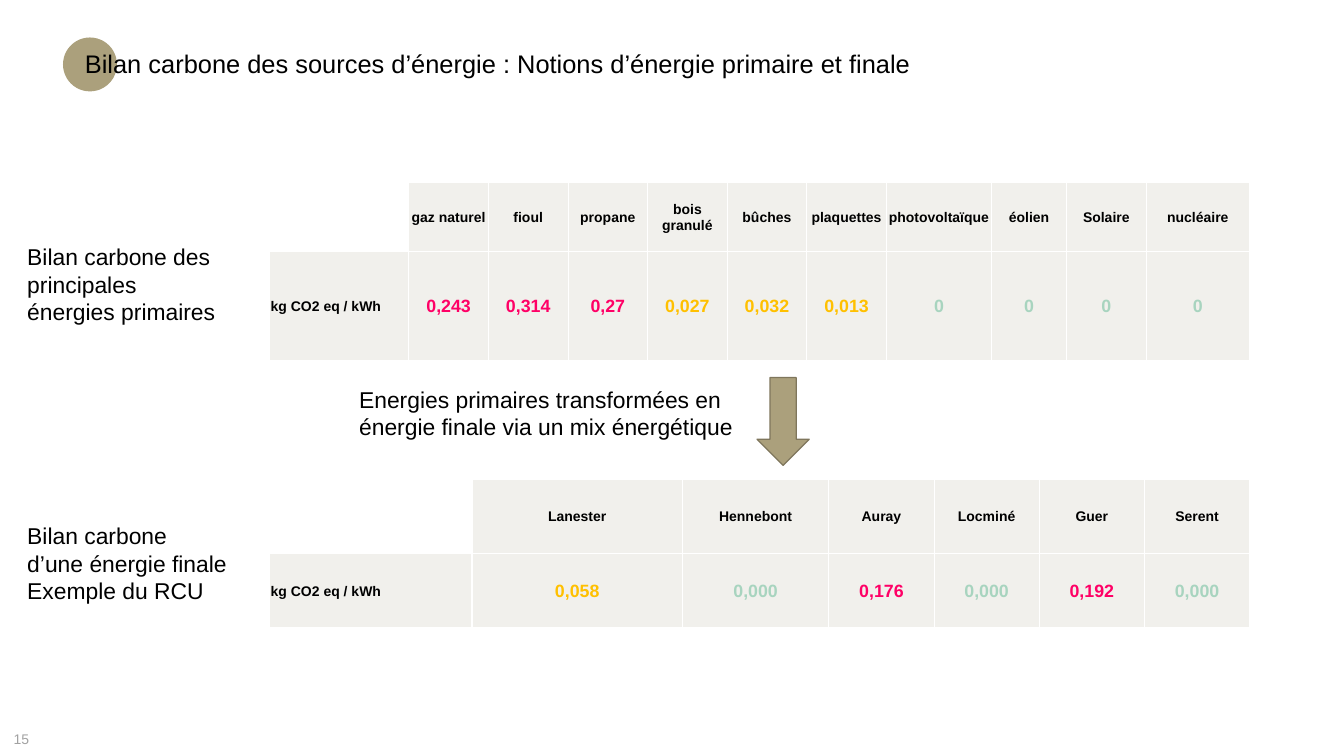
from dataclasses import dataclass

from lxml.etree import SubElement
from pptx import Presentation
from pptx.dml.color import RGBColor as Rgb
from pptx.enum.shapes import MSO_SHAPE as Preset
from pptx.enum.text import MSO_ANCHOR as Anchor, PP_ALIGN as Align
from pptx.oxml.ns import qn
from pptx.util import Inches, Pt


@dataclass(frozen=True)
class Theme:
    """Colours, font and type sizes of the slide."""
    font: str = "Arial"
    ink: str = "000000"
    muted: str = "A2A2A2"
    accent: str = "ABA07C"
    accent_edge: str = "7F765C"
    cell: str = "F1F0EC"
    rule: str = "FFFFFF"
    high: str = "FF0066"
    medium: str = "FFC000"
    zero: str = "A8D4BF"
    title_size: int = 20
    label_size: int = 18
    value_size: int = 14
    small_size: int = 11


@dataclass(frozen=True)
class Box:
    """A rectangle whose inner boxes are given in percent of its sides."""
    left: float
    top: float
    width: float
    height: float

    def share(self, left, top, width, height):
        """Return the box at the given percentages of this one."""
        return Box(self.left + self.width * left / 100,
                   self.top + self.height * top / 100,
                   self.width * width / 100,
                   self.height * height / 100)

    def place(self):
        """Return the four lengths as whole units."""
        return [int(side) for side in
                (self.left, self.top, self.width, self.height)]


THEME = Theme()
HIGH_CARBON = 0.1
UNIT = "kg CO2 eq / kWh"

PRIMARY = [("gaz naturel", "0,243"), ("fioul", "0,314"), ("propane", "0,27"),
           ("bois granulé", "0,027"), ("bûches", "0,032"),
           ("plaquettes", "0,013"), ("photovoltaïque", "0"), ("éolien", "0"),
           ("Solaire", "0"), ("nucléaire", "0")]
PRIMARY_COLUMNS = [1.52] + [0.87] * 6 + [1.15, 0.82, 0.87, 1.13]

FINAL = [("Lanester", "0,058"), ("Hennebont", "0,000"), ("Auray", "0,176"),
         ("Locminé", "0,000"), ("Guer", "0,192"), ("Serent", "0,000")]
FINAL_COLUMNS = [2.21, 2.3, 1.6] + [1.15] * 4


def add_run(paragraph, wording, size, color=THEME.ink, bold=False):
    """Add one styled run to a paragraph."""
    run = paragraph.add_run()
    run.text = wording
    run.font.name = THEME.font
    run.font.size = Pt(size)
    run.font.bold = bold
    run.font.color.rgb = Rgb.from_string(color)


def add_text(slide, box, lines, size, color=THEME.ink, wrap=True):
    """Add a text box with one paragraph per line and return its frame."""
    frame = slide.shapes.add_textbox(*box.place()).text_frame
    frame.word_wrap = wrap
    for index, line in enumerate(lines):
        paragraph = frame.add_paragraph() if index else frame.paragraphs[0]
        add_run(paragraph, line, size, color)
    return frame


def add_accent(slide, preset, box, edge=None):
    """Add an accent shape, outlined when an edge colour is given."""
    accent = slide.shapes.add_shape(preset, *box.place())
    accent.shadow.inherit = False
    accent.fill.solid()
    accent.fill.fore_color.rgb = Rgb.from_string(THEME.accent)
    if edge:
        accent.line.color.rgb = Rgb.from_string(edge)
        accent.line.width = Pt(1)
    else:
        accent.line.fill.background()


def style_cell(cell, filled):
    """Set the borders, fill, margins and anchor of a table cell."""
    properties = cell._tc.get_or_add_tcPr()
    for side in ("a:lnL", "a:lnR", "a:lnT", "a:lnB"):
        border = SubElement(properties, qn(side), w=str(Pt(1)))
        SubElement(SubElement(border, qn("a:solidFill")),
                   qn("a:srgbClr"), val=THEME.rule)
    if filled:
        cell.fill.solid()
        cell.fill.fore_color.rgb = Rgb.from_string(THEME.cell)
    else:
        cell.fill.background()
    cell.margin_left = cell.margin_right = cell.margin_top = Inches(0.01)
    cell.margin_bottom = 0
    cell.vertical_anchor = Anchor.MIDDLE


def carbon_color(value):
    """Return the colour that rates a carbon value."""
    amount = float(value.replace(",", "."))
    if amount >= HIGH_CARBON:
        return THEME.high
    return THEME.medium if amount else THEME.zero


def add_carbon_table(slide, box, sources, columns, rows):
    """Add a table of carbon values, with columns and rows as weights."""
    table = slide.shapes.add_table(2, len(columns), *box.place()).table
    table.first_row = table.horz_banding = False
    for column, weight in zip(table.columns, columns):
        column.width = int(box.width * weight / sum(columns))
    for row, weight in zip(table.rows, rows):
        row.height = int(box.height * weight / sum(rows))
    for index, cell in enumerate(table.iter_cells()):
        style_cell(cell, filled=index > 0)
    add_run(table.cell(1, 0).text_frame.paragraphs[0], UNIT,
            THEME.small_size, bold=True)
    for column, (source, value) in enumerate(sources, 1):
        heading, reading = (table.cell(row, column).text_frame.paragraphs[0]
                            for row in range(2))
        heading.alignment = reading.alignment = Align.CENTER
        add_run(heading, source, THEME.small_size, bold=True)
        add_run(reading, value, THEME.value_size, carbon_color(value), True)


def add_header(slide, box):
    """Place the accent disc and the title."""
    add_accent(slide, Preset.OVAL, box.share(0, 0, 4.6, 100))
    title = add_text(slide, box.share(1.1, 3.4, 98.9, 95),
                     ["Bilan carbone des sources d’énergie : "
                      "Notions d’énergie primaire et finale"],
                     THEME.title_size)
    title.vertical_anchor = Anchor.MIDDLE
    title.paragraphs[0].line_spacing = 0.9


def add_balance(slide, box, label, label_top, sources, columns, rows):
    """Place a label on the left and its carbon table on the right."""
    add_carbon_table(slide, box.share(20.42, 0, 79.58, 100),
                     sources, columns, rows)
    add_text(slide, box.share(0, label_top, 17.74, 100 - label_top),
             label, THEME.label_size)


def add_transition(slide, box):
    """Place the sentence and arrow that link the two tables."""
    add_accent(slide, Preset.DOWN_ARROW, box.share(88.64, 0, 11.36, 100),
               THEME.accent_edge)
    add_text(slide, box.share(0, 4.1, 94.4, 74),
             ["Energies primaires transformées en énergie finale "
              "via un mix énergétique"], THEME.label_size)


def add_page_number(slide, box):
    """Place the page number."""
    add_text(slide, box, ["15"], THEME.small_size, THEME.muted, wrap=False)


def main():
    """Build the slide and save it."""
    deck = Presentation()
    deck.slide_width, deck.slide_height = Inches(14.7), Inches(8.27)
    slide = deck.slides.add_slide(deck.slide_layouts[6])
    page = Box(0, 0, deck.slide_width, deck.slide_height)
    add_page_number(slide, page.share(0.34, 96.01, 3.27, 3.51))
    add_header(slide, page.share(4.69, 4.96, 87.22, 7.13))
    add_balance(slide, page.share(1.36, 24.18, 91.64, 23.46),
                ["Bilan carbone des principales énergies primaires"], 31.46,
                PRIMARY, PRIMARY_COLUMNS, [0.75, 1.19])
    add_transition(slide, page.share(26.05, 49.94, 34.16, 11.61))
    add_balance(slide, page.share(1.36, 63.36, 91.64, 19.71),
                ["Bilan carbone d’une énergie finale", "Exemple du RCU"], 25.8,
                FINAL, FINAL_COLUMNS, [1, 1])
    deck.save("out.pptx")


if __name__ == "__main__":
    main()
